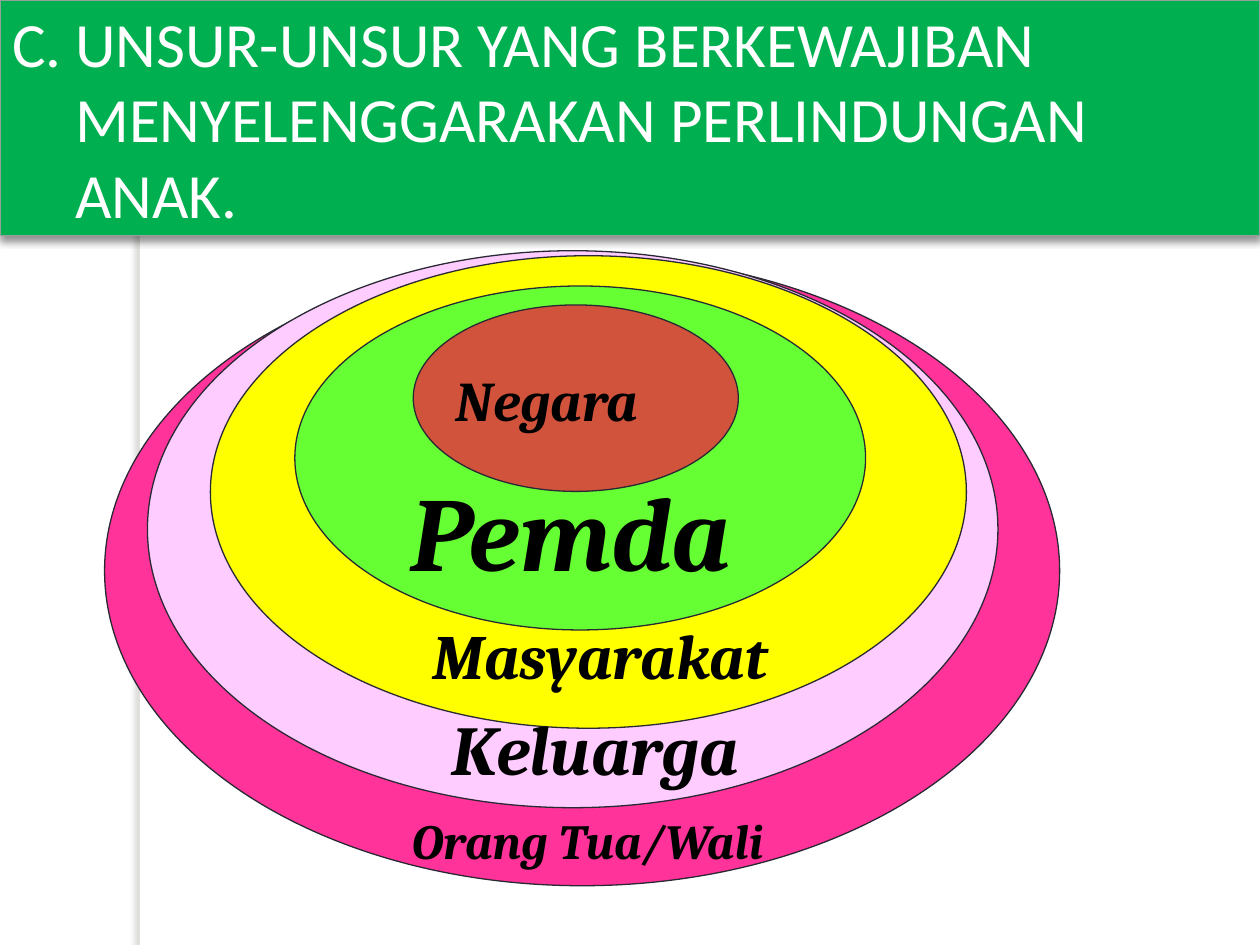
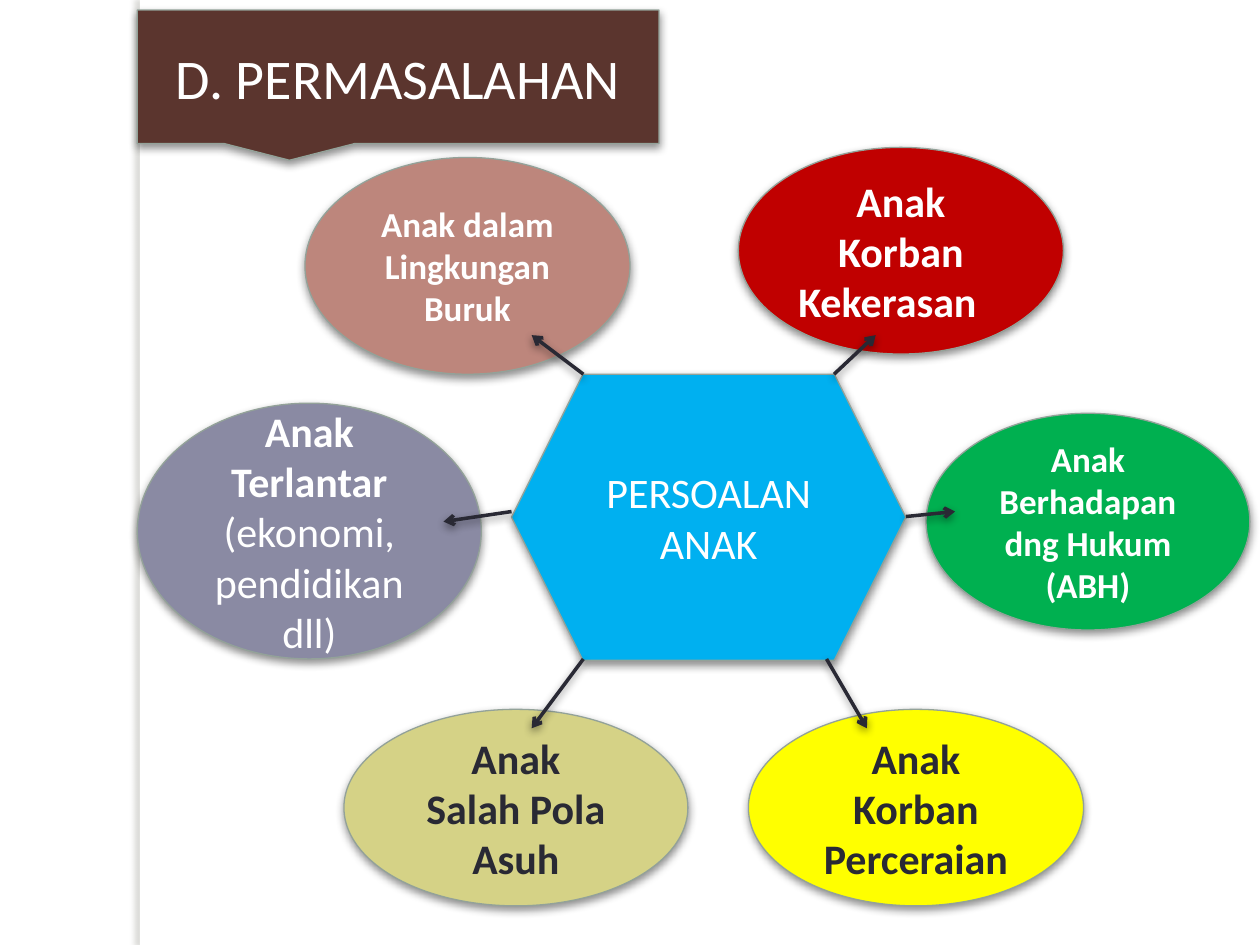
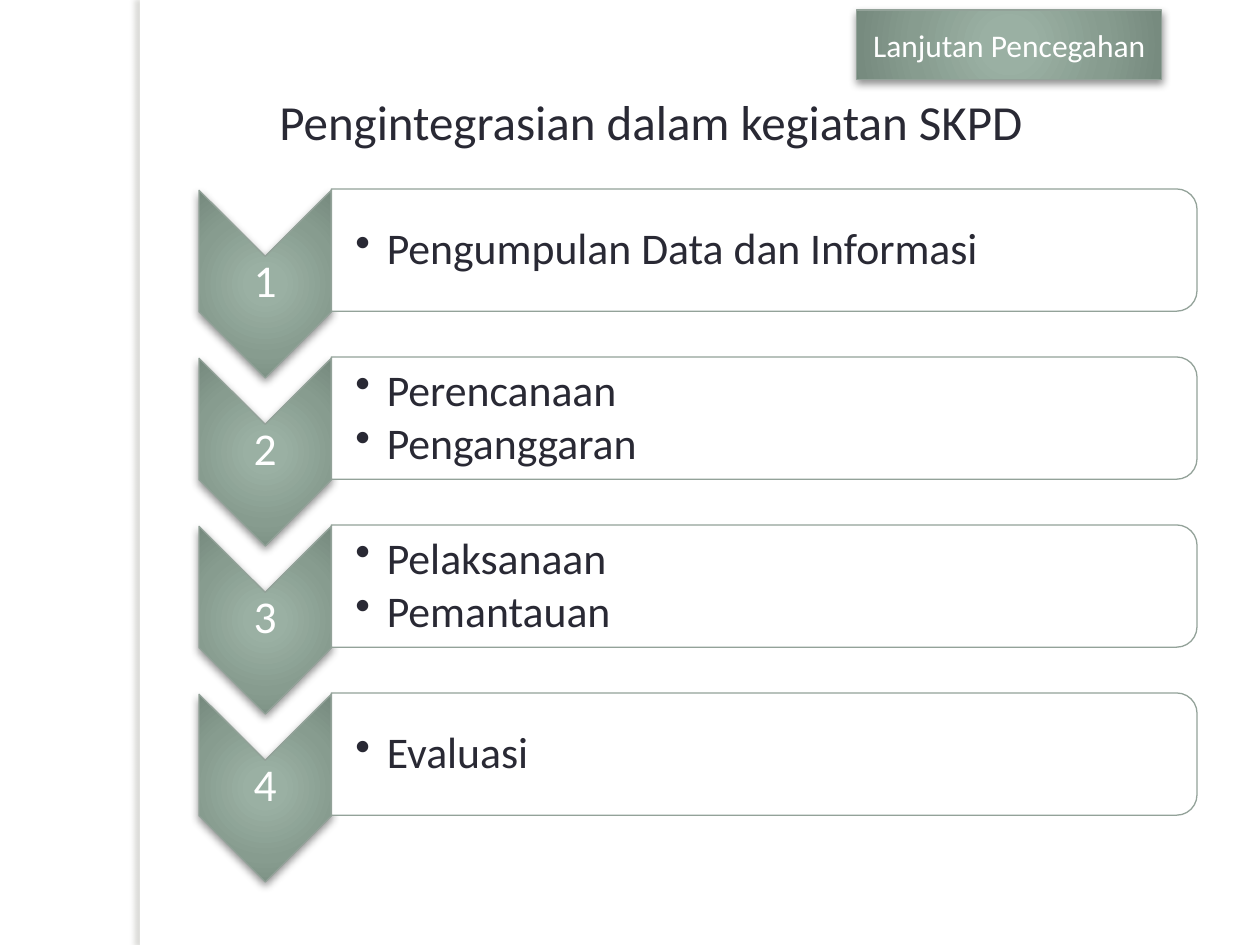
"""Build three slides on child protection duties, problems and prevention."""
from copy import deepcopy

from pptx import Presentation
from pptx.dml.color import RGBColor
from pptx.enum.shapes import MSO_CONNECTOR, MSO_SHAPE
from pptx.enum.text import MSO_ANCHOR, MSO_AUTO_SIZE, PP_ALIGN
from pptx.oxml import parse_xml
from pptx.oxml.ns import nsdecls
from pptx.util import Inches, Pt

RECT, OVAL = MSO_SHAPE.RECTANGLE, MSO_SHAPE.OVAL
HEXAGON, CALLOUT = MSO_SHAPE.HEXAGON, MSO_SHAPE.RECTANGULAR_CALLOUT
CHEVRON, ROUND_TOP = MSO_SHAPE.CHEVRON, MSO_SHAPE.ROUND_2_SAME_RECTANGLE
STRAIGHT = MSO_CONNECTOR.STRAIGHT
LEFT, CENTER = PP_ALIGN.LEFT, PP_ALIGN.CENTER
MIDDLE = MSO_ANCHOR.MIDDLE
GROW = MSO_AUTO_SIZE.SHAPE_TO_FIT_TEXT

WHITE = RGBColor(0xFF, 0xFF, 0xFF)
BLACK = RGBColor(0x00, 0x00, 0x00)
INK = RGBColor(0x29, 0x29, 0x34)
SAGE = RGBColor(0x93, 0xA2, 0x99)
GREEN = RGBColor(0x00, 0xB0, 0x50)
YELLOW = RGBColor(0xFF, 0xFF, 0x00)
PINK = RGBColor(0xFF, 0x33, 0x99)
PALE_PINK = RGBColor(0xFF, 0xCC, 0xFF)
LIME = RGBColor(0x66, 0xFF, 0x33)
BRICK = RGBColor(0xD2, 0x53, 0x3C)
SKY = RGBColor(0x00, 0xB0, 0xF0)
RED = RGBColor(0xC0, 0x00, 0x00)
BROWN = RGBColor(0x5B, 0x35, 0x2E)
SAND = RGBColor(0xD5, 0xD2, 0x86)
SLATE = RGBColor(0x8A, 0x8A, 0xA3)
ROSE = RGBColor(0xBD, 0x86, 0x7C)

SHADOW = (
    '<a:effectLst {}><a:outerShdw blurRad="{}" dist="{}" dir="{}" algn="ctr" rotWithShape="0">'
    '<a:srgbClr val="{}"><a:alpha val="{}"/></a:srgbClr></a:outerShdw></a:effectLst>'
)
DROP = parse_xml(SHADOW.format(nsdecls("a"), Pt(5), Pt(2), 5400000, "000000", 43000))
BAND_EDGE = parse_xml(SHADOW.format(nsdecls("a"), Pt(3), Pt(3), 10800000, "79796D", 25000))
STOPS = [(0, "9BB0A3"), (15, "9AB0A3"), (62, "879C8F"), (97, "778B7F"), (100, "73887B")]
SAGE_GLOW = parse_xml(
    f'<a:gradFill {nsdecls("a")} rotWithShape="1"><a:gsLst>'
    + "".join(f'<a:gs pos="{at * 1000}"><a:srgbClr val="{tone}"/></a:gs>' for at, tone in STOPS)
    + '</a:gsLst><a:path path="circle"><a:fillToRect l="50000" t="50000" r="50000" b="50000"/>'
    '</a:path></a:gradFill>'
)


def place(slide, preset, box, fill, line=SAGE, shadow=DROP):
    """Add a filled preset shape with its outline and shadow."""
    shape = slide.shapes.add_shape(preset, *map(Inches, box))
    if isinstance(fill, RGBColor):
        shape.fill.solid()
        shape.fill.fore_color.rgb = fill
    else:
        shape.element.spPr.append(deepcopy(fill))
    if line is None:
        shape.line.fill.background()
    else:
        shape.line.color.rgb = line
        shape.line.width = Pt(0.75)
    if shadow is None:
        shape.shadow.inherit = False
    else:
        shape.element.spPr.append(deepcopy(shadow))
    return shape


def write(shape, lines, size, color, font="Calibri", bold=False, italic=False, align=CENTER):
    """Write one paragraph per line and return the text frame."""
    frame = shape.text_frame
    frame.word_wrap = True
    for index, line in enumerate(lines):
        paragraph = frame.add_paragraph() if index else frame.paragraphs[0]
        paragraph.alignment = align
        run = paragraph.add_run()
        run.text = line
        run.font.size, run.font.name = Pt(size), font
        run.font.bold, run.font.italic = bold, italic
        run.font.color.rgb = color
    return frame


prs = Presentation()
prs.slide_width, prs.slide_height = Inches(10), Inches(7.5)
blank = prs.slide_layouts[6]
duties, problems, prevention = [prs.slides.add_slide(blank) for _ in range(3)]

side_band = place(duties, RECT, (1.11, 0, 0.08, 7.5), WHITE, None, BAND_EDGE)
blank.shapes.element.append(side_band.element)

RINGS = [
    ((0.83, 2.03, 7.58, 5), PINK),
    ((1.17, 1.99, 6.75, 4.42), PALE_PINK),
    ((1.67, 2.03, 6, 3.75), YELLOW),
    ((2.34, 2.27, 4.53, 2.73), LIME),
    ((3.28, 2.42, 2.58, 1.48), BRICK),
]
for box, fill in RINGS:
    place(duties, OVAL, box, fill, INK, None)

heading = place(duties, RECT, (0, 0, 10, 1.87), GREEN)
heading_text = write(
    heading, ["UNSUR-UNSUR YANG BERKEWAJIBAN MENYELENGGARAKAN PERLINDUNGAN ANAK."],
    36, WHITE, align=LEFT)
numbering = heading_text.paragraphs[0]._p.get_or_add_pPr()
numbering.set("marL", str(Inches(0.5)))
numbering.set("indent", str(Inches(-0.5)))
numbering.append(parse_xml(f'<a:buAutoNum {nsdecls("a")} type="alphaUcPeriod" startAt="3"/>'))

RING_LABELS = [
    ("Masyarakat", (2.73, 4.84, 4.06, 0.71), 36, CENTER),
    ("Pemda", (2.89, 3.65, 3.28, 1.11), 60, CENTER),
    ("Keluarga ", (3.2, 5.55, 3.17, 0.77), 40, CENTER),
    ("Orang Tua/Wali ", (3.12, 6.38, 3.17, 0.57), 28, CENTER),
    ("Negara", (3.52, 2.85, 1.88, 0.64), 32, LEFT),
]
for label, box, size, align in RING_LABELS:
    ring_label = duties.shapes.add_textbox(*map(Inches, box))
    write(ring_label, [label], size, BLACK, "Cambria", True, True, align).auto_size = GROW

core = place(problems, HEXAGON, (4.06, 2.97, 3.13, 2.27), SKY)
write(core, ["PERSOALAN ANAK"], 24, WHITE)
topic = place(problems, CALLOUT, (1.09, 0.08, 4.14, 1.06), BROWN)
write(topic, ["D. PERMASALAHAN"], 32, WHITE)

CASES = {
    "violence": ((5.86, 1.17, 2.58, 1.64), RED, WHITE, 24, ["Anak Korban", "Kekerasan"]),
    "law": ((7.35, 3.28, 2.57, 1.72), GREEN, WHITE, 20,
            ["Anak", "Berhadapan", "dng Hukum", "(ABH)"]),
    "divorce": ((5.94, 5.63, 2.66, 1.56), YELLOW, INK, 24, ["Anak", "Korban", "Perceraian"]),
    "parenting": ((2.73, 5.63, 2.73, 1.56), SAND, INK, 24, ["Anak", "Salah Pola", "Asuh"]),
    "neglect": ((1.09, 3.2, 2.73, 2.03), SLATE, WHITE, 24,
                ["Anak", "Terlantar", "(ekonomi,", "pendidikan", "dll)"]),
    "surroundings": ((2.42, 1.25, 2.58, 1.72), ROSE, WHITE, 20,
                     ["Anak dalam", "Lingkungan", "Buruk"]),
}
case_texts = {}
for case, (box, fill, color, size, lines) in CASES.items():
    case_texts[case] = write(place(problems, OVAL, box, fill), lines, size, color, bold=True)
case_texts["violence"].paragraphs[1].alignment = LEFT
for detail in case_texts["neglect"].paragraphs[2:]:
    detail.runs[0].font.bold = False

ARROWS = [
    (4.63, 2.97, 4.22, 2.66),
    (4.63, 5.23, 4.22, 5.78),
    (4.06, 4.06, 3.52, 4.14),
    (6.62, 2.97, 6.95, 2.66),
    (7.19, 4.1, 7.58, 4.06),
    (6.56, 5.23, 6.88, 5.78),
]
for ends in ARROWS:
    arrow = problems.shapes.add_connector(STRAIGHT, *map(Inches, ends))
    arrow.line.color.rgb = INK
    arrow.line.width = Pt(2)
    outline = arrow.element.spPr.get_or_add_ln()
    outline.append(parse_xml(f'<a:tailEnd {nsdecls("a")} type="arrow"/>'))
    arrow.element.spPr.append(deepcopy(DROP))

STEPS = [
    ["Pengumpulan Data dan Informasi"],
    ["Perencanaan", "Penganggaran"],
    ["Pelaksanaan", "Pemantauan"],
    ["Evaluasi"],
]
for step, activities in enumerate(STEPS):
    top = 1.5 + step * 4 / 3
    marker = place(prevention, CHEVRON, (1.36, top + 0.23, 1.49, 1.05), SAGE_GLOW)
    panel = place(prevention, ROUND_TOP, (5.58, top - 2.95, 0.97, 6.87), WHITE, shadow=None)
    marker.rotation = panel.rotation = 90

    number = prevention.shapes.add_textbox(*map(Inches, (1.58, top + 0.52, 1.05, 0.45)))
    number_text = write(number, [str(step + 1)], 26, WHITE)
    number_text.paragraphs[0].line_spacing = 0.9
    activity_list = prevention.shapes.add_textbox(*map(Inches, (2.63, top + 0.05, 6.82, 0.88)))
    activity_text = write(activity_list, activities, 25, INK, align=LEFT)
    for frame, inset in ((number_text, 0.02), (activity_text, 0.19)):
        frame.vertical_anchor = MIDDLE
        frame.margin_left = Inches(inset)
        frame.margin_right = frame.margin_top = frame.margin_bottom = Inches(0.02)
    for activity in activity_text.paragraphs:
        activity.level = 1
        activity.line_spacing = 0.9
        activity.space_after = Pt(3.75)
        bullet = activity._p.get_or_add_pPr()
        bullet.set("marL", str(Inches(0.25)))
        bullet.set("indent", str(Inches(-0.25)))
        bullet.append(parse_xml(f'<a:buChar {nsdecls("a")} char="•"/>'))

subject = prevention.shapes.add_textbox(*map(Inches, (1.75, 0.68, 6.83, 0.57)))
write(subject, ["Pengintegrasian dalam kegiatan SKPD"], 28, INK).auto_size = GROW
continuation = place(prevention, RECT, (6.8, 0.08, 2.42, 0.55), SAGE_GLOW)
write(continuation, ["Lanjutan Pencegahan"], 18, WHITE)

prs.save("out.pptx")
